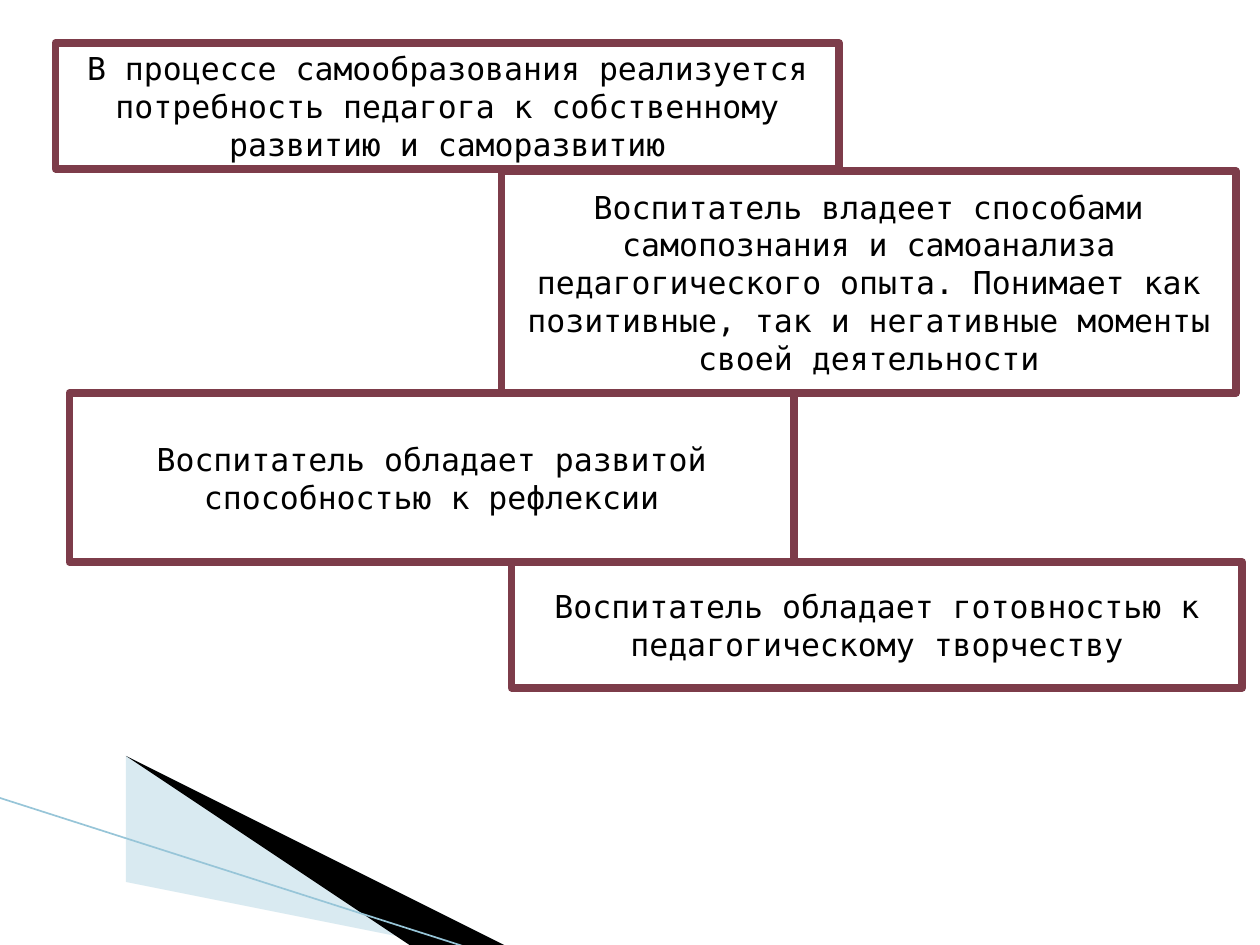
import pptx
import pptx.util
import pptx.dml.color
import pptx.enum.shapes
import pptx.enum.text
import pptx.oxml
import pptx.oxml.ns
import lxml.etree

Inches = pptx.util.Inches
RGBColor = pptx.dml.color.RGBColor
qn = pptx.oxml.ns.qn

WHITE = RGBColor(0xFF, 0xFF, 0xFF)
BLACK = RGBColor(0, 0, 0)
MAROON = RGBColor(0x7D, 0x3C, 0x4A)
PALE_BLUE = RGBColor(0xA0, 0xCB, 0xDC)
EDGE_BLUE = RGBColor(0x97, 0xC5, 0xD8)
FONT = "DejaVu Sans Mono"

STATEMENTS = [
    ("В процессе самообразования реализуется потребность педагога "
     "к собственному развитию и саморазвитию", (0.44, 0.34, 6.22, 1)),
    ("Воспитатель владеет способами самопознания и самоанализа "
     "педагогического опыта. Понимает как позитивные, так и негативные "
     "моменты своей деятельности", (3.98, 1.36, 5.83, 1.76)),
    ("Воспитатель обладает развитой способностью к рефлексии",
     (0.55, 3.12, 5.75, 1.34)),
    ("Воспитатель обладает готовностью к педагогическому творчеству",
     (4.06, 4.46, 5.8, 1)),
]
WEDGES = [
    ([(0.55, 6.51), (5.95, 7.51), (4.56, 7.51), (0.55, 6.5)], PALE_BLUE, 40),
    ([(0.53, 6.49), (4.57, 7.51), (3.72, 7.52), (0.54, 6.5)], BLACK, 100),
]
EDGE = (-0.01, 6.33, 3.71, 7.52)


def add_wedge(slide, points, color, opacity):
    builder = slide.shapes.build_freeform(*points[0], scale=Inches(1))
    builder.add_line_segments(points[1:], close=True)
    wedge = builder.convert_to_shape()
    wedge.shadow.inherit = False
    wedge.fill.solid()
    wedge.fill.fore_color.rgb = color
    wedge.line.fill.background()
    if opacity < 100:
        tint = wedge.fill._xPr.find(".//" + qn("a:srgbClr"))
        lxml.etree.SubElement(tint, qn("a:alpha"), val=str(opacity * 1000))


def add_edge(slide):
    edge = slide.shapes.add_connector(
        pptx.enum.shapes.MSO_CONNECTOR.STRAIGHT, *map(Inches, EDGE))
    edge.line.color.rgb = EDGE_BLUE
    edge.line.width = pptx.util.Pt(0.95)
    lxml.etree.SubElement(edge._element.spPr, qn("a:effectLst"))


def add_statement(slide, text, bounds):
    box = slide.shapes.add_shape(
        pptx.enum.shapes.MSO_SHAPE.RECTANGLE, *map(Inches, bounds))
    box.shadow.inherit = False
    box.fill.solid()
    box.fill.fore_color.rgb = WHITE
    box.line.color.rgb = MAROON
    box.line.width = pptx.util.Pt(4.33)
    lxml.etree.SubElement(box.line._get_or_add_ln(), qn("a:round"))
    frame = box.text_frame
    frame.word_wrap = True
    frame.vertical_anchor = pptx.enum.text.MSO_ANCHOR.MIDDLE
    frame.text = text
    paragraph = frame.paragraphs[0]
    paragraph.alignment = pptx.enum.text.PP_ALIGN.CENTER
    font = paragraph.runs[0].font
    font.name = FONT
    font.size = pptx.util.Pt(18)
    font.color.rgb = BLACK


def main():
    deck = pptx.Presentation()
    deck.slide_width, deck.slide_height = Inches(10), Inches(7.5)
    slide = deck.slides.add_slide(deck.slide_layouts[6])
    for wedge in WEDGES:
        add_wedge(slide, *wedge)
    add_edge(slide)
    for statement in STATEMENTS:
        add_statement(slide, *statement)
    deck.save("out.pptx")


if __name__ == "__main__":
    main()
